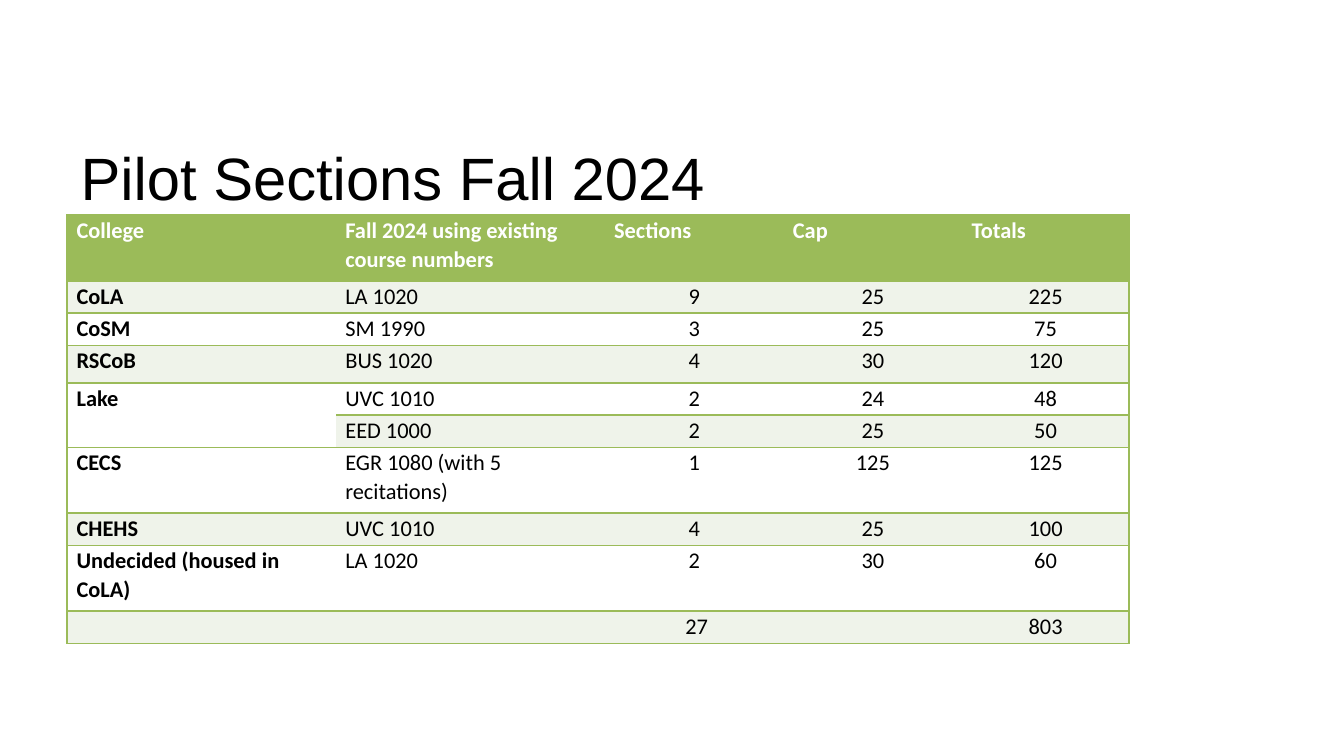
"""Builds the slide listing the pilot course sections for fall 2024."""
from lxml.etree import SubElement
from pptx import Presentation
from pptx.dml.color import RGBColor
from pptx.enum.text import MSO_ANCHOR as ANCHOR, PP_ALIGN as ALIGN
from pptx.oxml.ns import qn
from pptx.util import Inches, Pt

GREEN, PALE, WHITE, BLACK = "9BBB59", "EFF3EA", "FFFFFF", "000000"
TITLE = "Pilot Sections Fall 2024"
ROWS = [
    ("College", "Fall 2024 using existing course numbers", "Sections", "Cap", "Totals"),
    ("CoLA", "LA 1020", "9", "25", "225"),
    ("CoSM", "SM 1990", "3", "25", "75"),
    ("RSCoB", "BUS 1020", "4", "30", "120"),
    ("Lake", "UVC 1010", "2", "24", "48"),
    ("", "EED 1000", "2", "25", "50"),
    ("CECS", "EGR 1080 (with 5 recitations)", "1", "125", "125"),
    ("CHEHS", "UVC 1010", "4", "25", "100"),
    ("Undecided (housed in CoLA)", "LA 1020", "2", "30", "60"),
    ("", "", " 27", "", "803"),
]
WIDTHS = [2, 2, 1.33, 1.33, 1.24]
HEIGHTS = [0.49, 0.24, 0.24, 0.28, 0.24, 0.24, 0.49, 0.24, 0.49, 0.24]
LAKE_ROW = 4


def rgb(color):
    return RGBColor.from_string(color)


def write(tf, text, size, font, color=BLACK, bold=False, align=ALIGN.LEFT, line=None, after=0):
    p = tf.paragraphs[0]
    p.alignment, p.line_spacing, p.space_after = align, line, Pt(after)
    p.font.size = Pt(size)
    if text:
        r = p.add_run()
        r.text = text
        f = r.font
        f.size, f.name, f.bold = Pt(size), font, bold
        f.color.rgb = rgb(color)


def set_borders(cell, sides):
    tcPr = cell._tc.get_or_add_tcPr()
    for i, side in enumerate("LRTB"):
        ln = SubElement(tcPr, qn(f"a:ln{side}"), w=str(Pt(1)))
        if side in sides:
            SubElement(SubElement(ln, qn("a:solidFill")), qn("a:srgbClr"), val=GREEN)
        else:
            SubElement(ln, qn("a:noFill"))
        tcPr.insert(i, ln)


def add_title(slide):
    sp = slide.shapes.title
    sp.left, sp.top, sp.width, sp.height = map(Inches, (0.5, 1, 8.75, 1.21))
    sp.text_frame.vertical_anchor = ANCHOR.TOP
    write(sp.text_frame, TITLE, 32, "Arial")


def add_sections_table(slide):
    frame = slide.shapes.add_table(len(ROWS), len(WIDTHS), Inches(0.5), Inches(1.6),
                                   Inches(sum(WIDTHS)), Inches(sum(HEIGHTS)))
    table = frame.table
    for col, width in zip(table.columns, WIDTHS):
        col.width = Inches(width)
    for row, height in zip(table.rows, HEIGHTS):
        row.height = Inches(height)
    table.cell(LAKE_ROW, 0).merge(table.cell(LAKE_ROW + 1, 0))

    last = len(WIDTHS) - 1
    for i, row in enumerate(ROWS):
        header = i == 0
        fill = GREEN if header else PALE if i % 2 else WHITE
        for j, text in enumerate(row):
            cell = table.cell(i, j)
            cell.margin_left = cell.margin_right = Inches(0.07)
            cell.margin_top = cell.margin_bottom = 0
            cell.fill.solid()
            cell.fill.fore_color.rgb = rgb(fill)
            edge = "L" if j == 0 else "R" if j == last else ""
            set_borders(cell, edge + ("" if cell.is_spanned else "TB"))
            write(cell.text_frame, text, 12, "Calibri", line=1.07, after=8,
                  color=WHITE if header else BLACK, bold=header or j == 0,
                  align=ALIGN.CENTER if j > 1 and not header else ALIGN.LEFT)


def main():
    prs = Presentation()
    prs.slide_width = Inches(10)
    prs.slide_height = prs.slide_width * 9 // 16
    slide = prs.slides.add_slide(prs.slide_layouts[5])
    add_title(slide)
    add_sections_table(slide)
    prs.save("out.pptx")


if __name__ == "__main__":
    main()
